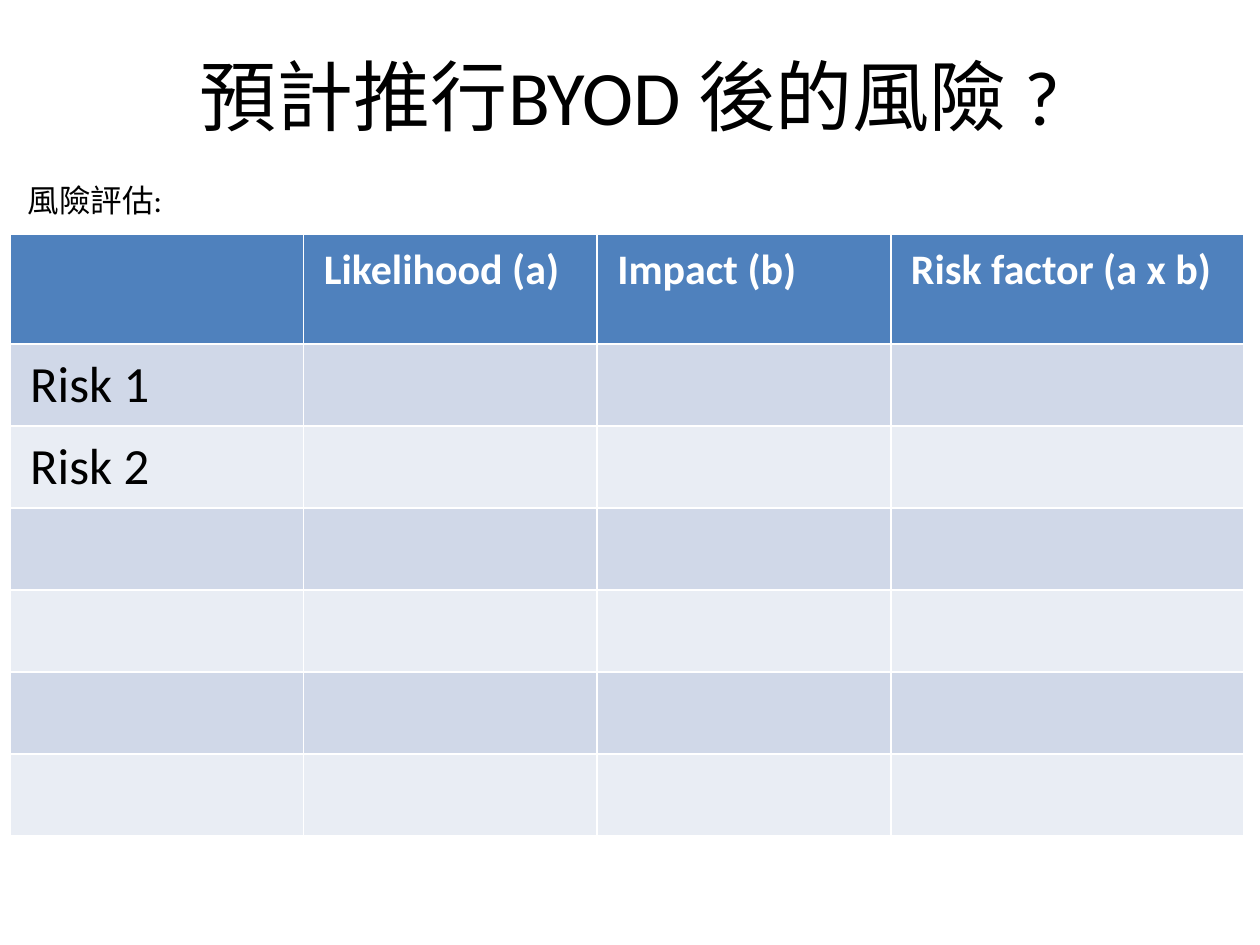
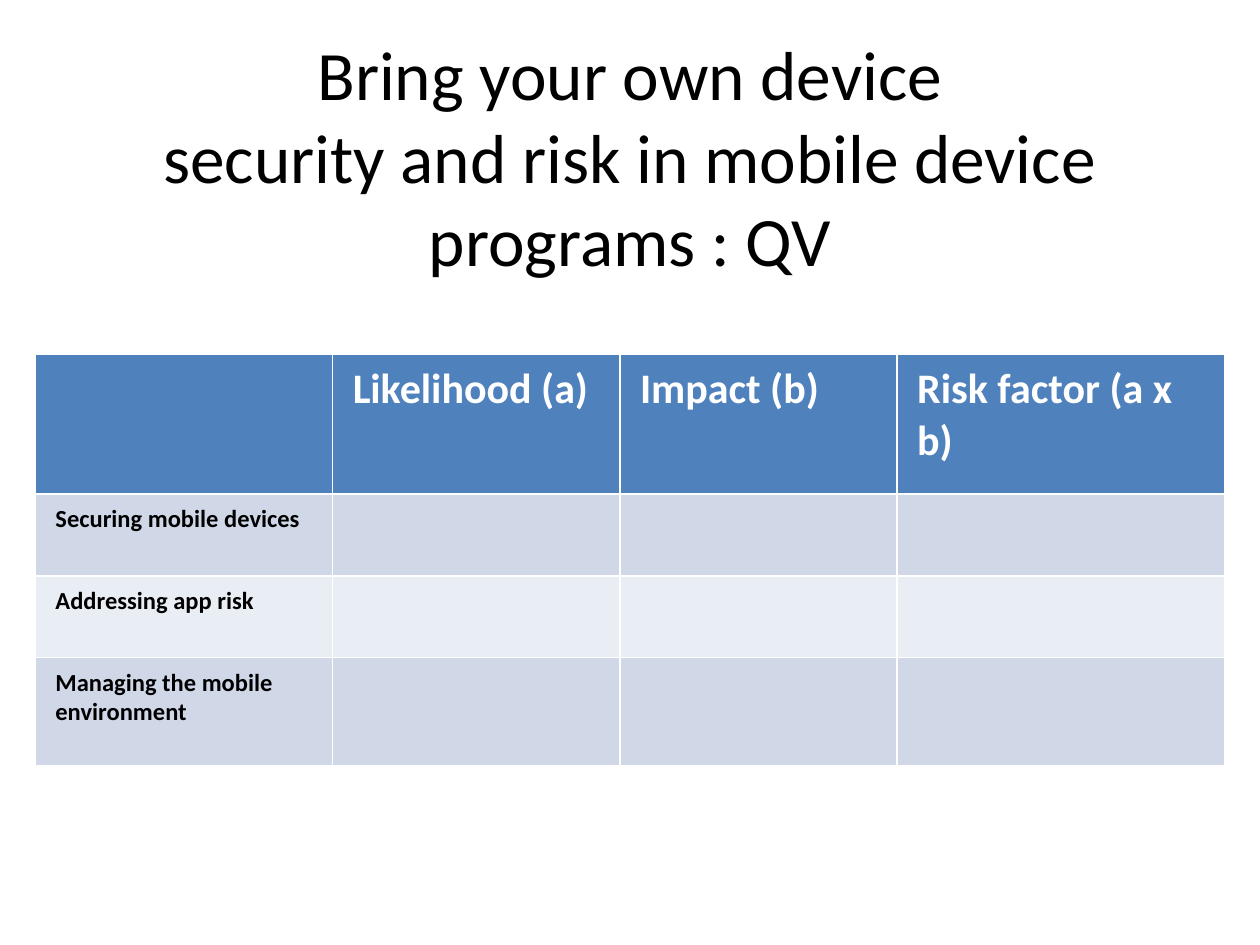
from pptx import Presentation
from pptx.dml.color import RGBColor
from pptx.enum.text import MSO_ANCHOR, MSO_AUTO_SIZE, PP_ALIGN
from pptx.util import Inches, Pt

FONT = "Calibri"
HUES = {"text": "000000", "head": "4F81BD", "light": "FFFFFF",
        "odd": "D0D8E8", "even": "E9EDF4"}
HEADS = ["", "Likelihood (a)", "Impact (b)", "Risk factor (a x b)"]


def style(para, size, hue="text", bold=False):
    """Set the font of one paragraph."""
    font = para.font
    font.name, font.size, font.bold = FONT, Pt(size), bold
    font.color.rgb = RGBColor.from_string(HUES[hue])


def add_page(deck, text, top, size):
    """Add a slide with a centred title."""
    page = deck.slides.add_slide(deck.slide_layouts[5])
    title = page.shapes.title
    title.left, title.top = Inches(0.5), Inches(top)
    title.width, title.height = Inches(9), Inches(1.25)
    frame = title.text_frame
    frame.text = text
    frame.auto_size = MSO_AUTO_SIZE.NONE
    frame.vertical_anchor = MSO_ANCHOR.MIDDLE
    para = frame.paragraphs[0]
    para.alignment = PP_ALIGN.CENTER
    style(para, size)
    return page


def add_label(page, text, left, top, width, height):
    """Add a one-line text box."""
    box = page.shapes.add_textbox(Inches(left), Inches(top),
                                  Inches(width), Inches(height))
    frame = box.text_frame
    frame.word_wrap = False
    frame.text = text
    style(frame.paragraphs[0], 18)


def fill_cell(cell, text, fill, size, hue, bold):
    """Fill one cell and write its text."""
    cell.fill.solid()
    cell.fill.fore_color.rgb = RGBColor.from_string(HUES[fill])
    if text:
        cell.margin_left = cell.margin_right = Inches(0.16)
        cell.margin_top = cell.margin_bottom = Inches(0.08)
        cell.text = text
        style(cell.text_frame.paragraphs[0], size, hue, bold)


def add_grid(page, left, top, widths, heights, risks, size, bold=False):
    """Add a risk table with a header row and banded rows."""
    frame = page.shapes.add_table(
        len(heights), len(widths), Inches(left), Inches(top),
        Inches(sum(widths)), Inches(sum(heights)))
    grid = frame.table
    for col, width in zip(grid.columns, widths):
        col.width = Inches(width)
    for num, height in enumerate(heights):
        grid.rows[num].height = Inches(height)
        for pos, cell in enumerate(grid.rows[num].cells):
            if num == 0:
                fill_cell(cell, HEADS[pos], "head", 24, "light", True)
            else:
                text = risks[num - 1] if pos == 0 and num <= len(risks) else ""
                band = "odd" if num % 2 else "even"
                fill_cell(cell, text, band, size, "text", bold)


def main():
    """Build and save both slides."""
    deck = Presentation()
    deck.slide_width, deck.slide_height = Inches(10), Inches(7.5)

    page = add_page(deck, "預計推行BYOD 後的風險 ?", 0.13, 44)
    add_grid(page, 0.08, 1.86, [2.33, 2.33, 2.33, 2.8],
             [0.87] + [0.65] * 6, ["Risk 1", "Risk 2"], 29)
    add_label(page, "風險評估:", 0.12, 1.39, 1.28, 0.4)

    page = add_page(deck, "Bring your own device\vsecurity and risk in "
                    "mobile device programs : QV", 0.61, 39.6)
    add_grid(page, 0.28, 2.81, [2.36, 2.28, 2.2, 2.6],
             [1.11, 0.65, 0.65, 0.86],
             ["Securing mobile devices", "Addressing app risk",
              "Managing the mobile environment"], 14, True)
    deck.save("out.pptx")


if __name__ == "__main__":
    main()
